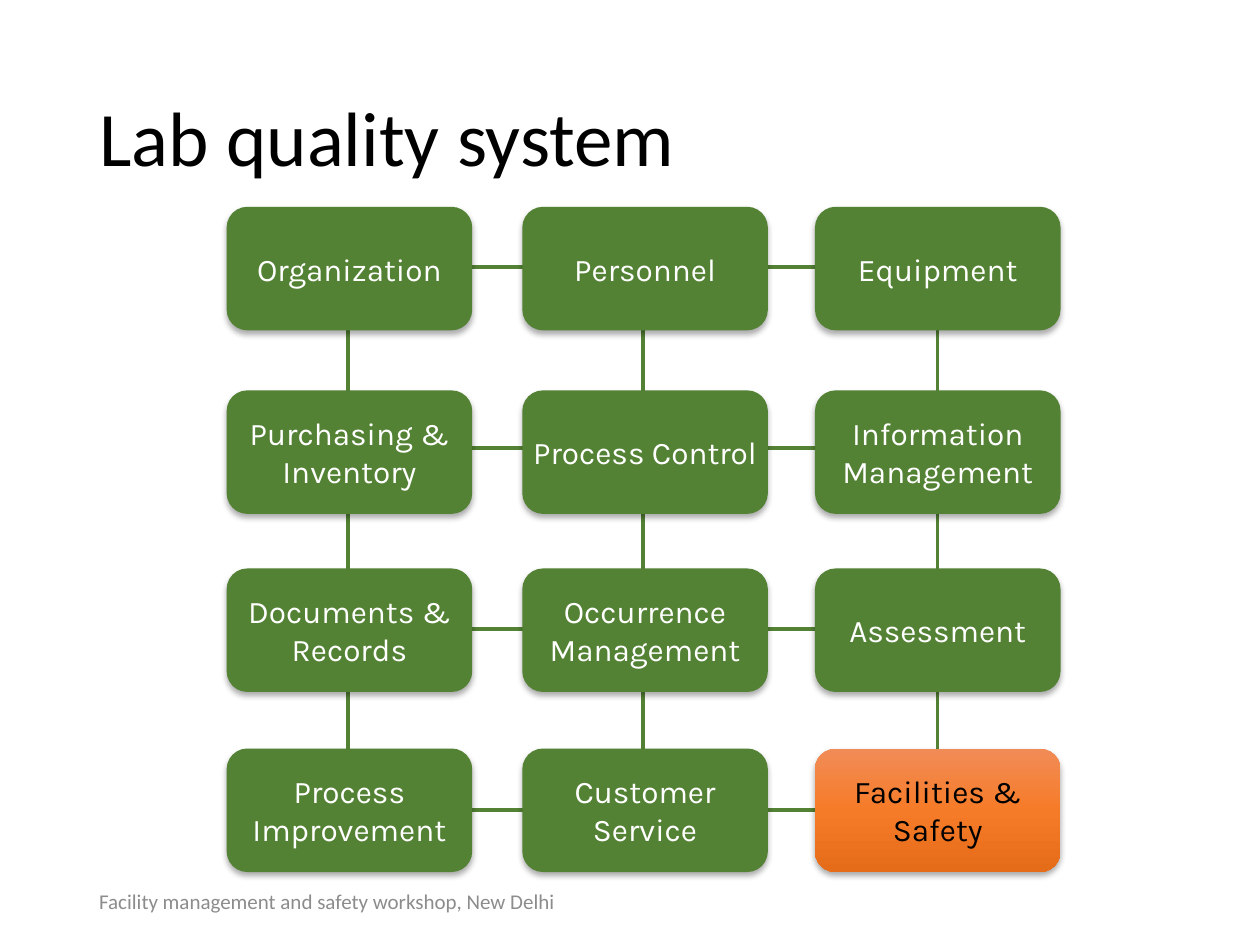
from lxml import etree
from pptx import Presentation
from pptx import util as u
from pptx.dml.color import RGBColor
from pptx.enum import shapes, text
from pptx.oxml import parse_xml
from pptx.oxml.ns import nsdecls, qn

Cm, Pt = u.Cm, u.Pt

COLORS = {
    "green": "548235",
    "white": "FFFFFF",
    "black": "000000",
    "grey": "8C8C8C",
    "orange_light": "F18C57",
    "orange": "F67B28",
    "orange_dark": "E56C19",
}
ESSENTIALS = [
    ["Organization", "Personnel", "Equipment"],
    ["Purchasing & Inventory", "Process Control", "Information Management"],
    ["Documents & Records", "Occurrence Management", "Assessment"],
    ["Process\nImprovement", "Customer Service", "Facilities & Safety"],
]
HIGHLIGHT = "Facilities & Safety"
# Card offsets inside the diagram, which is slightly uneven
CARD_LEFTS = [0, 5.96, 11.86]
CARD_TOPS = [0, 3.7, 7.29, 10.92]
CARD_WIDTH, CARD_HEIGHT = 4.95, 2.49


def rgb(name):
    return RGBColor.from_string(COLORS[name])


def style_text(frame, wording, size, face, color, align):
    frame.word_wrap = True
    frame.vertical_anchor = text.MSO_ANCHOR.MIDDLE
    frame.text = wording
    for paragraph in frame.paragraphs:
        paragraph.alignment = align
        paragraph.font.size = Pt(size)
        paragraph.font.name = face
        paragraph.font.color.rgb = rgb(color)


def add_caption(slide, box, wording, size, color, line_spacing=None):
    caption = slide.shapes.add_textbox(*map(Cm, box))
    style_text(caption.text_frame, wording, size, "Calibri", color,
               text.PP_ALIGN.LEFT)
    caption.text_frame.paragraphs[0].line_spacing = line_spacing


def add_lattice(slide, box, columns, rows):
    """Outlined cells whose edges link the cards."""
    left, top, width, height = box
    cell_width, cell_height = width / columns, height / rows
    lattice = slide.shapes.add_group_shape()
    for column in range(columns):
        for row in range(rows):
            cell = lattice.shapes.add_shape(
                shapes.MSO_SHAPE.RECTANGLE,
                Cm(left + column * cell_width), Cm(top + row * cell_height),
                Cm(cell_width), Cm(cell_height))
            cell.shadow.inherit = False
            cell.fill.background()
            cell.line.color.rgb = rgb("green")
            cell.line.width = Pt(2.25)


def add_soft_shadow(card):
    card.shadow.inherit = False
    effects = card._element.spPr.find(qn("a:effectLst"))
    shadow = etree.SubElement(
        effects, qn("a:outerShdw"), blurRad=str(Pt(3.5)), dist=str(Pt(2.2)),
        dir="5400000", algn="t", rotWithShape="0")
    tint = etree.SubElement(shadow, qn("a:srgbClr"), val=COLORS["black"])
    etree.SubElement(tint, qn("a:alpha"), val="32000")


def fill_orange(card):
    names = ["orange_light", "orange", "orange_dark"]
    stops = "".join(
        f'<a:gs pos="{i * 50000}"><a:srgbClr val="{COLORS[name]}"/></a:gs>'
        for i, name in enumerate(names))
    gradient = parse_xml(
        f'<a:gradFill {nsdecls("a")} rotWithShape="1"><a:gsLst>{stops}</a:gsLst>'
        '<a:lin ang="5400000" scaled="0"/></a:gradFill>')
    card._element.spPr.find(qn("a:prstGeom")).addnext(gradient)


def add_card(slide, box, wording):
    card = slide.shapes.add_shape(
        shapes.MSO_SHAPE.FLOWCHART_ALTERNATE_PROCESS, *map(Cm, box))
    highlighted = wording == HIGHLIGHT
    if highlighted:
        fill_orange(card)
    else:
        card.fill.solid()
        card.fill.fore_color.rgb = rgb("green")
    card.line.fill.background()
    add_soft_shadow(card)
    frame = card.text_frame
    frame.margin_left = frame.margin_right = 0
    frame.margin_top = frame.margin_bottom = 0
    style_text(frame, wording, 18, "Karla",
               "black" if highlighted else "white", text.PP_ALIGN.CENTER)


def add_diagram(slide, left, top):
    add_lattice(slide, (left + 2.44, top + 1.21, 11.89, 10.95), 2, 3)
    for row_top, row in zip(CARD_TOPS, ESSENTIALS):
        for card_left, wording in zip(CARD_LEFTS, row):
            add_card(slide, (left + card_left, top + row_top,
                             CARD_WIDTH, CARD_HEIGHT), wording)


def main():
    deck = Presentation()
    deck.slide_width, deck.slide_height = Cm(25.4), Cm(19.05)
    slide = deck.slides.add_slide(deck.slide_layouts[6])

    # Title
    add_caption(slide, (1.75, 1.01, 21.9, 3.68), "Lab quality system",
                44, "black", 0.9)
    # Twelve quality system essentials
    add_diagram(slide, 4.57, 4.17)
    # Footer
    add_caption(slide, (1.75, 17.66, 15.24, 1.01),
                "Facility management and safety workshop, New Delhi", 12, "grey")

    deck.save("out.pptx")


if __name__ == "__main__":
    main()
